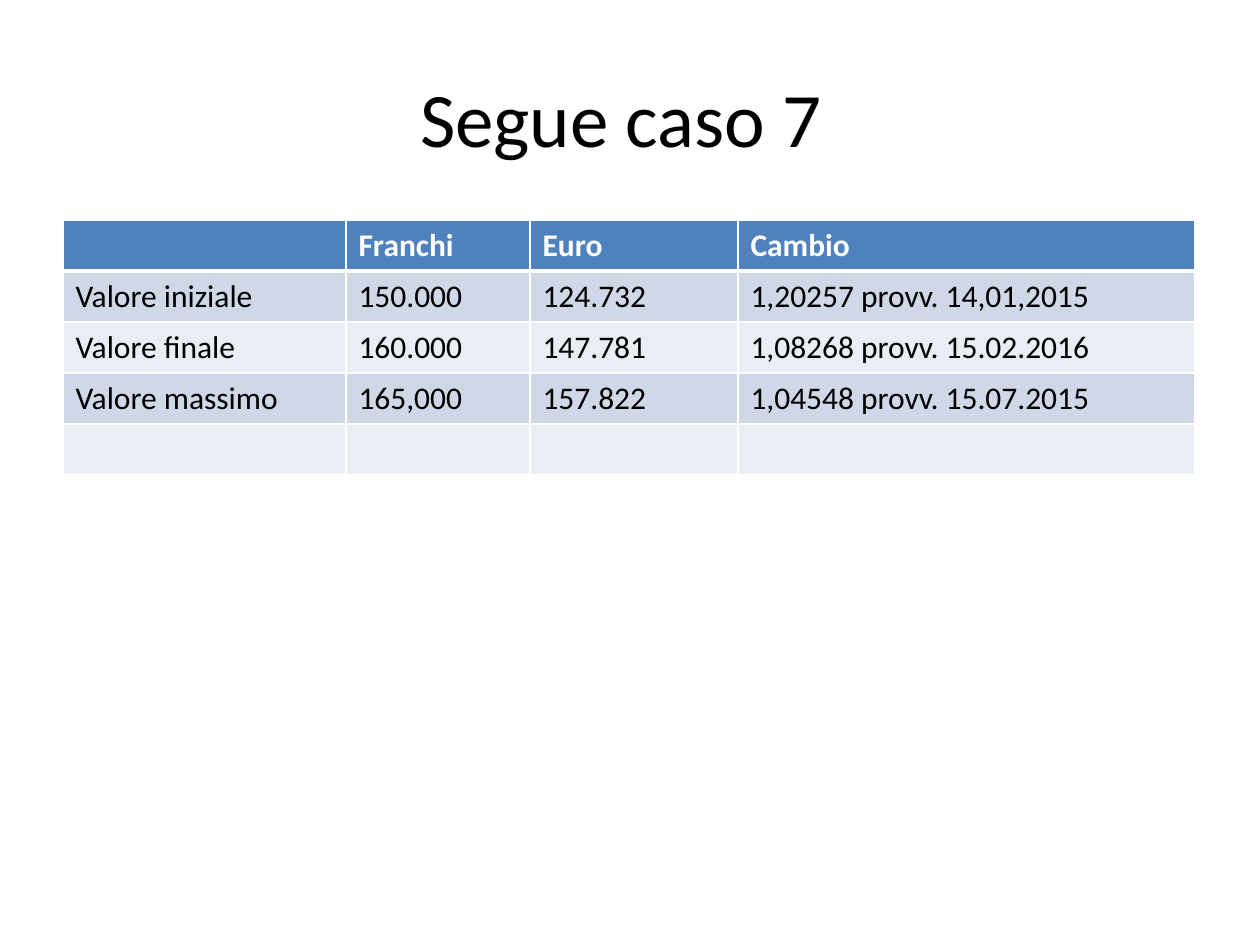
import lxml.etree
import pptx
import pptx.dml.color
import pptx.enum.text
import pptx.oxml.ns
import pptx.util

PX = 914400 / 126
COLORS = {"header": "4F81BD", "band_dark": "D0D8E8", "band_light": "E9EDF4",
          "white": "FFFFFF", "black": "000000"}
FONT = "Calibri"
COL_WIDTHS = [283, 184, 208, 457]
ROW_HEIGHT = 51
ROWS = [
    ["", "Franchi", "Euro", "Cambio"],
    ["Valore iniziale", "150.000", "124.732", "1,20257 provv. 14,01,2015"],
    ["Valore finale", "160.000", "147.781", "1,08268 provv. 15.02.2016"],
    ["Valore massimo", "165,000", "157.822", "1,04548 provv. 15.07.2015"],
    ["", "", "", ""],
]


def px(n):
    return pptx.util.Emu(round(n * PX))


def rgb(name):
    return pptx.dml.color.RGBColor.from_string(COLORS[name])


def write(p, text, color, size, bold=False):
    r = p.add_run()
    r.text = text
    for key, value in {"name": FONT, "size": pptx.util.Pt(size), "bold": bold}.items():
        setattr(r.font, key, value)
    r.font.color.rgb = rgb(color)


def add_title(s, text, x, y, w, h):
    tf = s.shapes.add_textbox(px(x), px(y), px(w), px(h)).text_frame
    tf.word_wrap = True
    tf.vertical_anchor = pptx.enum.text.MSO_ANCHOR.MIDDLE
    p = tf.paragraphs[0]
    p.alignment = pptx.enum.text.PP_ALIGN.CENTER
    write(p, text, "black", 44)


def set_borders(cell, widths):
    """Draw white cell borders; widths maps a side (L, R, T, B) to points."""
    tc_pr = cell._tc.get_or_add_tcPr()
    qn = pptx.oxml.ns.qn
    for side, width in widths.items():
        ln = lxml.etree.SubElement(tc_pr, qn(f"a:ln{side}"), w=str(pptx.util.Pt(width)))
        fill = lxml.etree.SubElement(ln, qn("a:solidFill"))
        lxml.etree.SubElement(fill, qn("a:srgbClr"), val=COLORS["white"])


def add_value_table(s, rows, x, y):
    table = s.shapes.add_table(len(rows), len(COL_WIDTHS), px(x), px(y),
                               px(sum(COL_WIDTHS)), px(ROW_HEIGHT * len(rows))).table
    for col, width in zip(table.columns, COL_WIDTHS):
        col.width = px(width)
    for i, texts in enumerate(rows):
        table.rows[i].height = px(ROW_HEIGHT)
        header = i == 0
        fill = "header" if header else "band_dark" if i % 2 else "band_light"
        borders = {"L": 1, "R": 1, "T": 3 if i == 1 else 1, "B": 3 if header else 1}
        for j, text in enumerate(texts):
            cell = table.cell(i, j)
            set_borders(cell, borders)
            cell.fill.solid()
            cell.fill.fore_color.rgb = rgb(fill)
            if text:
                write(cell.text_frame.paragraphs[0], text,
                      "white" if header else "black", 18, header)


def main():
    prs = pptx.Presentation()
    prs.slide_width, prs.slide_height = px(1260), px(945)
    s = prs.slides.add_slide(prs.slide_layouts[6])
    add_title(s, "Segue caso 7 ", 63, 38, 1134, 157)
    add_value_table(s, ROWS, 63, 220)
    prs.save("out.pptx")


if __name__ == "__main__":
    main()
